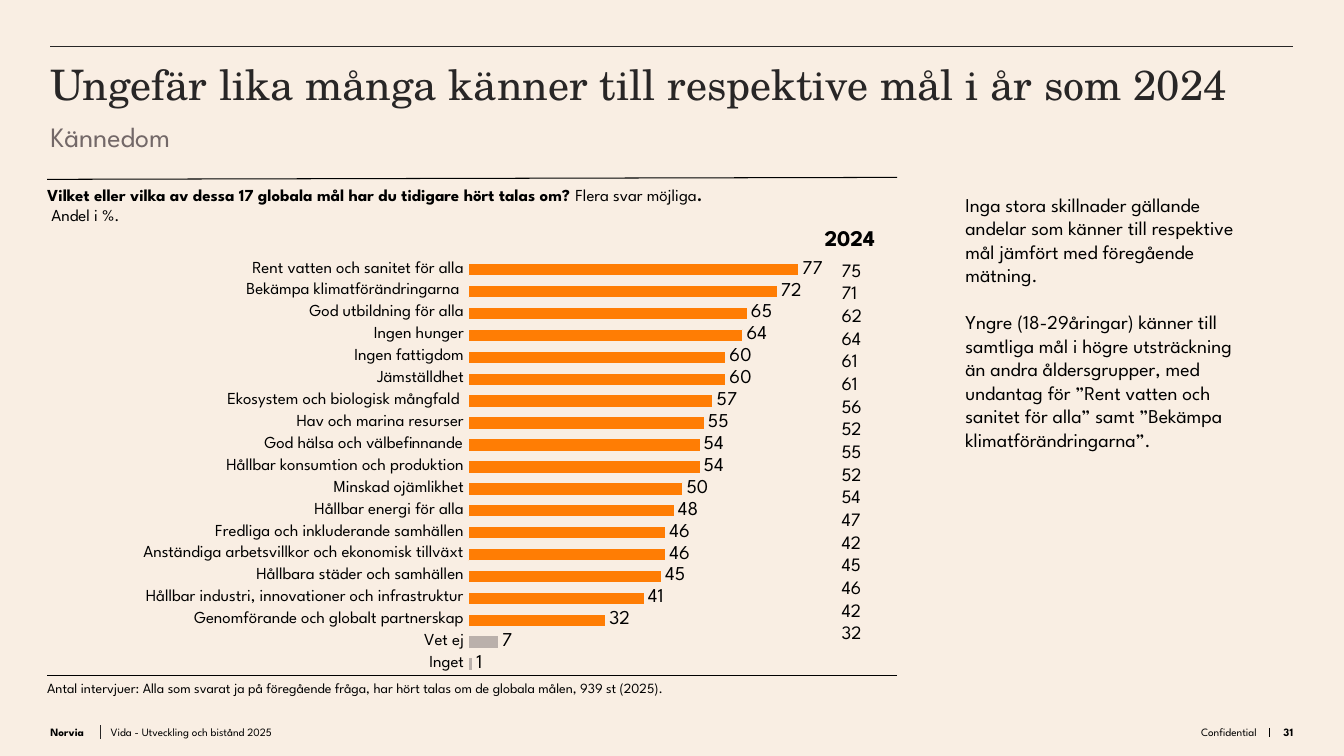
import pptx
import pptx.chart.data
import pptx.dml.color
import pptx.enum.chart
import pptx.enum.shapes
import pptx.enum.text
import pptx.oxml
import pptx.oxml.ns
import pptx.util
from dataclasses import dataclass
from lxml import etree

Cm, Pt = pptx.util.Cm, pptx.util.Pt
ALIGN = pptx.enum.text.PP_ALIGN
ANCHOR = pptx.enum.text.MSO_ANCHOR

GOALS = [
    ("Rent vatten och sanitet för alla", 77, 75),
    ("Bekämpa klimatförändringarna ", 72, 71),
    ("God utbildning för alla", 65, 62),
    ("Ingen hunger", 64, 64),
    ("Ingen fattigdom", 60, 61),
    ("Jämställdhet", 60, 61),
    ("Ekosystem och biologisk mångfald ", 57, 56),
    ("Hav och marina resurser", 55, 52),
    ("God hälsa och välbefinnande", 54, 55),
    ("Hållbar konsumtion och produktion", 54, 52),
    ("Minskad ojämlikhet", 50, 54),
    ("Hållbar energi för alla", 48, 47),
    ("Fredliga och inkluderande samhällen", 46, 42),
    ("Anständiga arbetsvillkor och ekonomisk tillväxt", 46, 45),
    ("Hållbara städer och samhällen", 45, 46),
    ("Hållbar industri, innovationer och infrastruktur", 41, 42),
    ("Genomförande och globalt partnerskap", 32, 32),
]
OTHER_ANSWERS = [("Vet ej", 7), ("Inget", 1)]


@dataclass(frozen=True)
class Theme:
    background: str = "F9EEE3"
    ink: str = "282626"
    black: str = "000000"
    muted: str = "736868"
    bar: str = "FF7D04"
    other_bar: str = "BAB0AB"
    body_font: str = "League Spartan"
    title_font: str = "TeX Gyre Schola"
    title: float = 30
    subtitle: float = 20
    heading: float = 16
    body: float = 14
    column: float = 13.5
    question: float = 12
    note: float = 10
    footer: float = 8


def rgb(code):
    return pptx.dml.color.RGBColor.from_string(code)


class SlideBuilder:
    """Draws styled elements, placed in centimetres, on one slide."""

    def __init__(self, slide, theme):
        self.slide, self.theme = slide, theme
        slide.background.fill.solid()
        slide.background.fill.fore_color.rgb = rgb(theme.background)

    def rule(self, x1, y1, x2, y2, color, width=0.5):
        line = self.slide.shapes.add_connector(
            pptx.enum.shapes.MSO_CONNECTOR.STRAIGHT, Cm(x1), Cm(y1), Cm(x2), Cm(y2))
        line.line.color.rgb = rgb(color)
        line.line.width = Pt(width)
        etree.SubElement(line._element.spPr, pptx.oxml.ns.qn("a:effectLst"))

    def text(self, paragraphs, left, top, width, height, size, font=None, color=None,
             bold=False, align=ALIGN.LEFT, anchor=ANCHOR.TOP, inset=(0, 0, 0, 0),
             wrap=True, gap=0):
        box = self.slide.shapes.add_textbox(Cm(left), Cm(top), Cm(width), Cm(height))
        frame = box.text_frame
        frame.word_wrap, frame.vertical_anchor = wrap, anchor
        (frame.margin_left, frame.margin_top,
         frame.margin_right, frame.margin_bottom) = map(Cm, inset)
        if isinstance(paragraphs, str):
            paragraphs = [paragraphs]
        for index, content in enumerate(paragraphs):
            paragraph = frame.add_paragraph() if index else frame.paragraphs[0]
            paragraph.alignment = align
            if index and gap:
                paragraph.space_before = Pt(gap)
            runs = [(content, bold)] if isinstance(content, str) else content
            for words, strong in runs:
                run = paragraph.add_run()
                run.text = words
                run.font.name = font or self.theme.body_font
                run.font.size = Pt(size)
                run.font.bold = strong
                run.font.color.rgb = rgb(color or self.theme.black)

    def footer(self, words, left, width, **style):
        self.text(words, left, 18.19, width, 0.43, self.theme.footer,
                  anchor=ANCHOR.BOTTOM, **style)

    def bar_chart(self, answers, grey_count, left, top, width, height, plot):
        theme = self.theme
        data = pptx.chart.data.CategoryChartData(number_format="#,##0")
        data.categories = [name for name, share in answers]
        data.add_series("Series 1", [share for name, share in answers])
        chart = self.slide.shapes.add_chart(
            pptx.enum.chart.XL_CHART_TYPE.BAR_CLUSTERED,
            Cm(left), Cm(top), Cm(width), Cm(height), data).chart
        chart.has_legend = chart.has_title = False
        chart.font.name = theme.body_font
        chart.font.size = Pt(theme.footer)
        chart.font.color.rgb = rgb(theme.black)

        names = chart.category_axis
        names.major_tick_mark = pptx.enum.chart.XL_TICK_MARK.NONE
        names.tick_labels.font.size = Pt(theme.question)
        names.format.line.color.rgb = rgb(theme.background)
        names.format.line.width = Pt(0.75)
        shares = chart.value_axis
        shares.minimum_scale, shares.maximum_scale = 0, 100
        shares.has_major_gridlines = shares.visible = False

        bars = chart.plots[0]
        bars.gap_width, bars.vary_by_categories = 75, False
        series = bars.series[0]
        points = [series.points[i] for i in range(grey_count)]
        for part, color in [(series, theme.bar)] + [(p, theme.other_bar) for p in points]:
            part.format.fill.solid()
            part.format.fill.fore_color.rgb = rgb(color)
            part.format.line.color.rgb = rgb(theme.background)
            part.format.line.width = Pt(0.25)
        labels = series.data_labels
        labels.show_value = True
        labels.position = pptx.enum.chart.XL_LABEL_POSITION.OUTSIDE_END
        labels.number_format, labels.number_format_is_linked = "#,##0", False
        labels.font.size = Pt(theme.body)
        self.place_plot(chart, plot)

    def place_plot(self, chart, plot):
        area = chart._chartSpace.chart.plotArea
        for old in area.findall(pptx.oxml.ns.qn("c:layout")):
            area.remove(old)
        settings = [("layoutTarget", "inner"), ("xMode", "edge"), ("yMode", "edge")]
        settings += zip("xywh", plot)
        fields = "".join(f'<c:{key} val="{value}"/>' for key, value in settings)
        area.insert(0, pptx.oxml.parse_xml(
            f'<c:layout {pptx.oxml.ns.nsdecls("c")}>'
            f'<c:manualLayout>{fields}</c:manualLayout></c:layout>'))


def main():
    deck = pptx.Presentation()
    deck.slide_width, deck.slide_height = Cm(33.87), Cm(19.05)
    theme = Theme()
    page = SlideBuilder(deck.slides.add_slide(deck.slide_layouts[6]), theme)

    page.rule(1.27, 1.17, 32.59, 1.17, theme.ink)
    page.rule(2.54, 18.62, 2.54, 18.26, theme.ink)
    page.rule(31.98, 18.34, 31.98, 18.57, theme.black)
    page.footer("Norvia", 1.27, 1.27, bold=True)
    page.footer("Vida - Utveckling och bistånd 2025", 2.79, 19.81)
    page.footer("Confidential", 26.09, 5.59, align=ALIGN.RIGHT)
    page.footer("31", 31.98, 0.61, bold=True, align=ALIGN.RIGHT)

    page.text("Ungefär lika många känner till respektive mål i år som 2024",
              1.27, 1.22, 31.29, 1.8, theme.title, font=theme.title_font,
              color=theme.ink, inset=(0, 0.25, 0, 0))
    page.text("Kännedom", 1.27, 3.02, 23.06, 1.19, theme.subtitle, color=theme.muted)

    page.rule(22.61, 4.47, 1.19, 4.52, theme.black, 0.75)
    page.text([[("Vilket eller vilka av dessa 17 globala mål har du tidigare hört talas om? ", True),
                ("Flera svar möjliga", False), (".", True)],
               " Andel i %."], 1.19, 4.65, 21.34, 1.09, theme.question)
    page.rule(22.61, 17.02, 1.19, 17.02, theme.black, 0.75)
    page.text("Antal intervjuer: Alla som svarat ja på föregående fråga, "
              "har hört talas om de globala målen, 939 st (2025).",
              1.19, 17.12, 21.41, 0.43, theme.note)

    answers = [(goal, share) for goal, share, previous in GOALS] + OTHER_ANSWERS
    page.bar_chart(answers[::-1], len(OTHER_ANSWERS), 0.15, 6.02, 23.06, 11.2,
                   plot=(0.505, 0.044, 0.469, 0.937))
    page.text("2024", 20.78, 5.64, 1.27, 0.69, theme.heading, bold=True, wrap=False)
    page.text([str(previous) for goal, share, previous in GOALS],
              20.96, 6.38, 3.38, 10.06, theme.column, inset=(0.25, 0.13, 0.25, 0.13))

    page.text(["Inga stora skillnader gällande andelar som känner till respektive mål "
               "jämfört med föregående mätning.",
               "Yngre (18-29åringar) känner till samtliga mål i högre utsträckning än "
               "andra åldersgrupper, med undantag för ”Rent vatten och sanitet för alla” "
               "samt ”Bekämpa klimatförändringarna”."],
              24.33, 4.85, 7.24, 9.4, theme.body, gap=16.8)
    deck.save("out.pptx")


if __name__ == "__main__":
    main()
